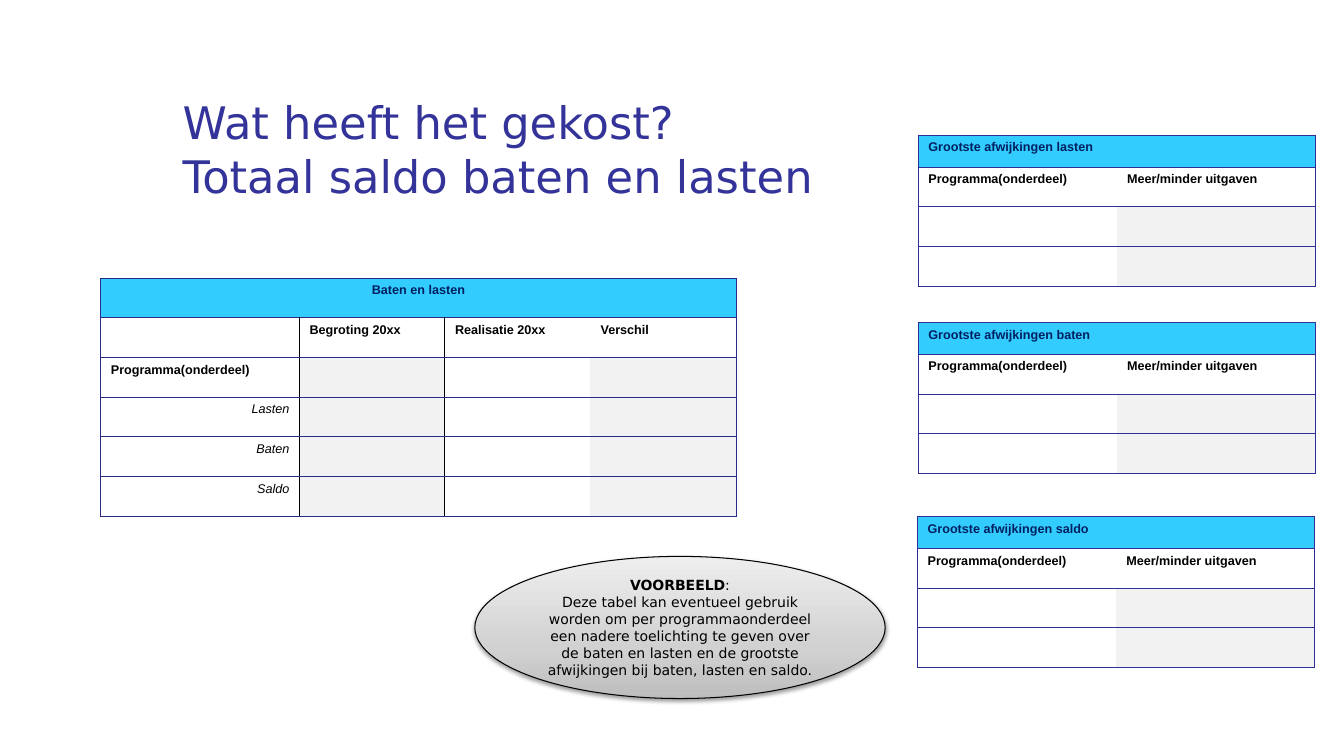
from dataclasses import dataclass, field
from typing import Any

from pptx import Presentation
from pptx.dml.color import RGBColor as Rgb
from pptx.enum.shapes import MSO_SHAPE as Kind
from pptx.enum.text import MSO_ANCHOR as Anchor, MSO_AUTO_SIZE as Fit, PP_ALIGN as Align
from pptx.oxml import parse_xml
from pptx.oxml.ns import nsdecls
from pptx.util import Inches, Pt


@dataclass(frozen=True)
class Theme:
    title: str = "333399"
    head: str = "002060"
    ink: str = "000000"
    band: str = "33CCFF"
    shade: str = "F2F2F2"
    stops: tuple = ((0, "BDBDBD"), (35, "D1D1D1"), (100, "EEEEEE"))
    sans: str = "DejaVu Sans"
    grid: str = "Arial"
    big: float = 32
    note: float = 10
    small: float = 9
    thin: float = 0.75
    thick: float = 1


@dataclass(frozen=True)
class Box:
    x: float
    y: float
    w: float
    h: float


@dataclass(frozen=True)
class Sheet:
    x: float
    y: float
    cols: tuple
    rows: tuple
    text: list
    shade: tuple
    edge: str
    align: Any = Align.LEFT
    rules: dict = field(default_factory=dict)


LOOK = Theme()
WIDE, HIGH = Inches(13.33), Inches(7.5)
FIRST, ROW, TOP, PART = 14.78, 5.25, 4.2, 10.83


def across(share: float) -> int:
    return round(WIDE * share / 100)


def down(share: float) -> int:
    return round(HIGH * share / 100)


def place(box: Box) -> tuple:
    return across(box.x), down(box.y), across(box.w), down(box.h)


def put(item: Any, values: dict) -> None:
    for name, value in values.items():
        setattr(item, name, value)


def style(run: Any, face: str, size: float, tint: str, bold: bool = False, slant: bool = False) -> None:
    put(run.font, {"name": face, "size": Pt(size), "bold": bold, "italic": slant})
    run.font.color.rgb = Rgb.from_string(tint)


def rule(cell: Any, side: str, pen: tuple | None) -> None:
    tint, width = pen or ("", 0)
    paint = f'<a:solidFill><a:srgbClr val="{tint}"/></a:solidFill>' if pen else "<a:noFill/>"
    cell._tc.get_or_add_tcPr().append(
        parse_xml(f'<a:ln{side} {nsdecls("a")} w="{Pt(width)}">{paint}</a:ln{side}>'))


def fill(cell: Any, tint: str | None) -> None:
    if tint:
        cell.fill.solid()
        cell.fill.fore_color.rgb = Rgb.from_string(tint)
    else:
        cell.fill.background()


def write(cell: Any, text: str, row: int, col: int, sheet: Sheet) -> None:
    para = cell.text_frame.paragraphs[0]
    if not text:
        para._p.get_or_add_endParaRPr().set("sz", str(LOOK.small * 100))
        return
    slant = row > 2
    para.alignment = sheet.align if row == 0 else Align.RIGHT if slant else Align.LEFT
    run = para.add_run()
    run.text = text
    style(run, LOOK.grid, LOOK.small, LOOK.ink if row else LOOK.head, not slant, slant)


def draw(slide: Any, sheet: Sheet) -> None:
    tall, span = len(sheet.rows), len(sheet.cols)
    box = Box(sheet.x, sheet.y, sum(sheet.cols), sum(sheet.rows))
    table = slide.shapes.add_table(tall, span, *place(box)).table
    put(table, {"first_row": False, "horz_banding": False})
    for col, share in zip(table.columns, sheet.cols):
        col.width = across(share)
    for row, share in zip(table.rows, sheet.rows):
        row.height = down(share)
    table.cell(0, 0).merge(table.cell(0, span - 1))
    line = (sheet.edge, LOOK.thin)
    for row in range(tall):
        rules = {0: line, span: line, **(sheet.rules if row else {})}
        for col in range(span):
            cell = table.cell(row, col)
            pens = {"L": rules.get(col), "R": rules.get(col + 1), "T": line, "B": line}
            if row == 0:
                pens["R"] = line if col in (0, span - 1) else None
            for side, pen in pens.items():
                rule(cell, side, pen)
            grey = LOOK.shade if row > 1 and col in sheet.shade else None
            fill(cell, grey if row else LOOK.band)
            words = sheet.text[row] if row < len(sheet.text) else ()
            write(cell, words[col] if col < len(words) else "", row, col, sheet)


def head(slide: Any) -> None:
    title = slide.shapes.title
    put(title, dict(zip(("left", "top", "width", "height"), place(Box(12.83, 11.33, 83.72, 16.67)))))
    frame = title.text_frame
    frame.text = "Wat heeft het gekost?\vTotaal saldo baten en lasten"
    put(frame, {"word_wrap": True, "auto_size": Fit.NONE, "vertical_anchor": Anchor.MIDDLE})
    para = frame.paragraphs[0]
    para.alignment = Align.LEFT
    for run in para.runs:
        style(run, LOOK.sans, LOOK.big, LOOK.title)


def bubble(slide: Any) -> None:
    shape = slide.shapes.add_shape(Kind.OVAL, *place(Box(35.33, 73.6, 30.53, 18.8)))
    shape.line.color.rgb = Rgb.from_string(LOOK.ink)
    shape.line.width = Pt(LOOK.thin)
    props = shape._element.spPr
    stops = "".join(f'<a:gs pos="{at * 1000}"><a:srgbClr val="{tint}"/></a:gs>' for at, tint in LOOK.stops)
    props.prstGeom.addnext(parse_xml(
        f'<a:gradFill {nsdecls("a")} rotWithShape="1"><a:gsLst>{stops}</a:gsLst>'
        '<a:lin ang="16200000" scaled="1"/></a:gradFill>'))
    props.append(parse_xml(
        f'<a:effectLst {nsdecls("a")}><a:outerShdw blurRad="{Pt(3.1)}" dist="{Pt(1.6)}" dir="5400000" '
        f'rotWithShape="0"><a:srgbClr val="{LOOK.ink}"><a:alpha val="38000"/></a:srgbClr>'
        '</a:outerShdw></a:effectLst>'))
    frame = shape.text_frame
    put(frame, {"word_wrap": True, "vertical_anchor": Anchor.MIDDLE})
    body = ("Deze tabel kan eventueel gebruik worden om per programmaonderdeel een nadere toelichting "
            "te geven over de baten en lasten en de grootste afwijkingen bij baten, lasten en saldo.")
    lines = ((("VOORBEELD", True), (":", False)), ((body, False),))
    for index, parts in enumerate(lines):
        para = frame.add_paragraph() if index else frame.paragraphs[0]
        para.alignment = Align.CENTER
        for text, bold in parts:
            run = para.add_run()
            run.text = text
            style(run, LOOK.sans, LOOK.note, LOOK.ink, bold)


def main() -> None:
    deck = Presentation()
    put(deck, {"slide_width": WIDE, "slide_height": HIGH})
    slide = deck.slides.add_slide(deck.slide_layouts[5])
    head(slide)
    label = "Programma(onderdeel)"
    draw(slide, Sheet(
        7.5, 36.8, (FIRST,) + (PART,) * 3, (ROW,) * 6,
        [("Baten en lasten",), ("", "Begroting 20xx", "Realisatie 20xx", "Verschil"),
         (label,), ("Lasten",), ("Baten",), ("Saldo",)],
        (1, 3), "2A2A89", Align.CENTER,
        {1: (LOOK.ink, LOOK.thick), 2: (LOOK.ink, LOOK.thin)}))
    for name, x, y in (("lasten", 68.33, 17.9), ("baten", 68.33, 42.67), ("saldo", 68.27, 68.36)):
        draw(slide, Sheet(
            x, y, (FIRST,) * 2, (TOP,) + (ROW,) * 3,
            [(f"Grootste afwijkingen {name}",), (label, "Meer/minder uitgaven")],
            (1,), "2F2F98"))
    bubble(slide)
    deck.save("out.pptx")


if __name__ == "__main__":
    main()
